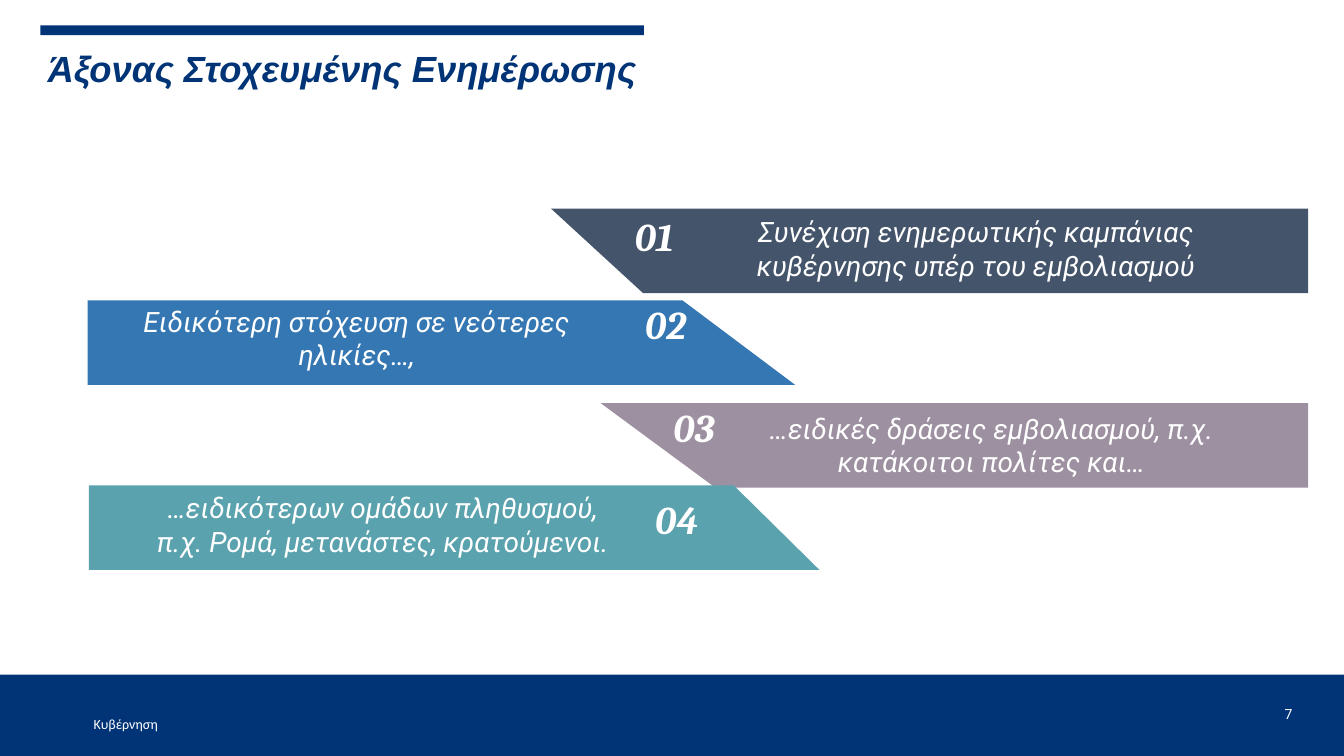
"""Build the slide on targeted information with four slanted banners."""
from dataclasses import dataclass

from pptx import Presentation
from pptx import util as u
from pptx.dml.color import RGBColor
from pptx.enum import shapes, text

NAVY = RGBColor(0x01, 0x34, 0x76)
WHITE = RGBColor(0xFF, 0xFF, 0xFF)
SLATE = RGBColor(0x44, 0x54, 0x6A)
BLUE = RGBColor(0x34, 0x77, 0xB2)
MAUVE = RGBColor(0x9D, 0x90, 0xA0)
TEAL = RGBColor(0x5A, 0xA2, 0xAE)

SLIDE_WIDTH, SLIDE_HEIGHT = 33.87, 19.05
BANNER_HEIGHT = 2.13


@dataclass
class Banner:
    """One banner; offsets are in centimetres from its top left corner."""
    left: float
    top: float
    width: float
    slant: float
    slants_left: bool
    color: RGBColor
    number: str
    number_offset: tuple
    wording: str
    wording_offset: tuple
    wording_width: float = 11.48


BANNERS = [
    Banner(13.89, 5.26, 19.08, 2.32, True, SLATE, "01", (2.11, 0.1),
           "Συνέχιση ενημερωτικής καμπάνιας κυβέρνησης υπέρ του εμβολιασμού",
           (3.56, 0.15), 14.3),
    Banner(2.21, 7.57, 17.83, 2.84, False, BLUE, "02", (14.05, 0),
           "Ειδικότερη στόχευση σε νεότερες ηλικίες…,", (1.04, 0.1)),
    Banner(15.14, 10.16, 17.83, 2.89, True, MAUVE, "03", (1.83, 0),
           "…ειδικές δράσεις εμβολιασμού, π.χ. κατάκοιτοι πολίτες και…",
           (4.11, 0.2)),
    Banner(2.24, 12.23, 18.41, 2.16, False, TEAL, "04", (14.27, 0.24),
           "…ειδικότερων ομάδων πληθυσμού, π.χ. Ρομά, μετανάστες, κρατούμενοι.",
           (1.67, 0.14)),
]


def paint(shape, color):
    """Give a shape a flat fill with no line and no shadow."""
    shape.shadow.inherit = False
    shape.fill.solid()
    shape.fill.fore_color.rgb = color
    shape.line.fill.background()


def add_bar(slide, left, top, width, height):
    """Add a plain navy rectangle."""
    bar = slide.shapes.add_shape(
        shapes.MSO_SHAPE.RECTANGLE, u.Cm(left), u.Cm(top), u.Cm(width), u.Cm(height))
    paint(bar, NAVY)


def add_text(slide, box, wording, font_name, size, color=WHITE, bold=False,
             italic=False, align=text.PP_ALIGN.LEFT, anchor=text.MSO_ANCHOR.TOP,
             inset=0, wrap=True):
    """Add a one-paragraph text box and return its paragraph."""
    frame = slide.shapes.add_textbox(*(u.Cm(length) for length in box)).text_frame
    frame.word_wrap = wrap
    frame.vertical_anchor = anchor
    frame.margin_left = frame.margin_right = u.Cm(inset)
    frame.margin_top = frame.margin_bottom = u.Cm(inset)
    paragraph = frame.paragraphs[0]
    paragraph.alignment = align
    run = paragraph.add_run()
    run.text = wording
    run.font.name = font_name
    run.font.size = u.Pt(size)
    run.font.bold = bold
    run.font.italic = italic
    run.font.color.rgb = color
    return paragraph


def add_header(slide, left, top):
    """Add the bar and the title under it."""
    add_bar(slide, left, top, 15.21, 0.25)
    title = add_text(slide, (left + 0.05, top + 0.48, 32.54, 1.35),
                     "Άξονας Στοχευμένης Ενημέρωσης", "Arial", 26, NAVY,
                     bold=True, italic=True, anchor=text.MSO_ANCHOR.MIDDLE, inset=0.13)
    title.line_spacing = 0.9


def add_footer(slide, top):
    """Add the bottom band with its label and the slide number."""
    add_bar(slide, 0, top, SLIDE_WIDTH, SLIDE_HEIGHT - top)
    add_text(slide, (2.31, top + 1.01, 4.72, 0.46), "Κυβέρνηση", "Calibri", 10,
             anchor=text.MSO_ANCHOR.MIDDLE, inset=0.05)
    add_text(slide, (32.08, top + 0.53, 0.74, 0.94), "7", "Roboto", 10,
             align=text.PP_ALIGN.RIGHT, anchor=text.MSO_ANCHOR.MIDDLE,
             inset=0.25, wrap=False)


def add_banner(slide, banner):
    """Add a banner with one slanted end, its number and its wording."""
    left, top = banner.left, banner.top
    right, bottom = left + banner.width, top + BANNER_HEIGHT
    if banner.slants_left:
        corners = [(left, top), (right, top), (right, bottom), (left + banner.slant, bottom)]
    else:
        corners = [(left, top), (right - banner.slant, top), (right, bottom), (left, bottom)]
    points = [(u.Cm(x), u.Cm(y)) for x, y in corners]
    builder = slide.shapes.build_freeform(*points[0])
    builder.add_line_segments(points[1:], close=True)
    paint(builder.convert_to_shape(), banner.color)

    number_x, number_y = banner.number_offset
    add_text(slide, (left + number_x, top + number_y, 1.85, 1.12), banner.number,
             "Cambria", 28, bold=True, italic=True)
    wording_x, wording_y = banner.wording_offset
    add_text(slide, (left + wording_x, top + wording_y, banner.wording_width, 1.7),
             banner.wording, "Roboto", 20, italic=True, align=text.PP_ALIGN.CENTER)


def main():
    """Build the presentation and save it."""
    presentation = Presentation()
    presentation.slide_width = u.Cm(SLIDE_WIDTH)
    presentation.slide_height = u.Cm(SLIDE_HEIGHT)
    slide = presentation.slides.add_slide(presentation.slide_layouts[6])
    add_footer(slide, 17)
    add_header(slide, 1.02, 0.64)
    for banner in BANNERS:
        add_banner(slide, banner)
    presentation.save("out.pptx")


if __name__ == "__main__":
    main()
